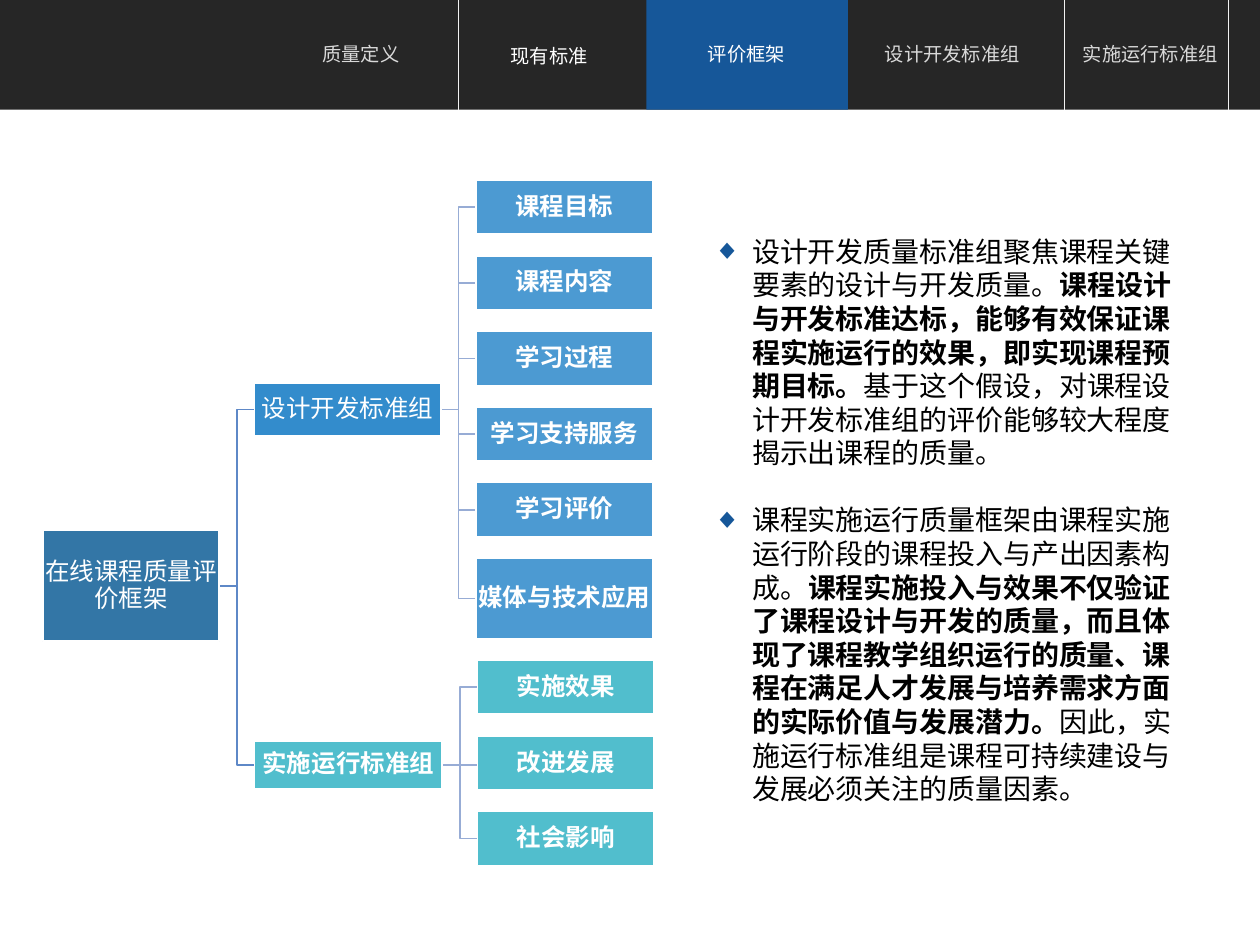
from lxml import etree
from pptx import Presentation
from pptx.dml.color import RGBColor
from pptx.enum.shapes import MSO_CONNECTOR, MSO_SHAPE
from pptx.enum.text import MSO_ANCHOR, MSO_AUTO_SIZE, PP_ALIGN
from pptx.oxml.ns import qn
from pptx.util import Inches, Pt

COLORS = {
    "bar": "262626", "active": "165799", "white": "FFFFFF", "muted": "D9D9D9",
    "divider": "F2F2F2", "black": "000000", "root": "005490", "design": "0070C0",
    "operate": "08A3B8", "trunk": "5E88C7", "branch": "97ACD5",
}
CJK = "Noto Sans CJK SC"


def rgb(name):
    return RGBColor.from_string(COLORS[name])


class Deck:
    def __init__(self, width, height):
        self.prs = Presentation()
        self.prs.slide_width, self.prs.slide_height = Inches(width), Inches(height)
        self.s = self.prs.slides.add_slide(self.prs.slide_layouts[1])

    def frame(self, sp, side=0.0, top=0.0, anchor=MSO_ANCHOR.MIDDLE):
        tf = sp.text_frame
        style = dict(word_wrap=True, auto_size=MSO_AUTO_SIZE.NONE, vertical_anchor=anchor,
                     margin_left=Inches(side), margin_right=Inches(side),
                     margin_top=Inches(top), margin_bottom=Inches(top))
        for key, value in style.items():
            setattr(tf, key, value)
        return tf

    def run(self, p, text, color, size, bold=False, font=CJK):
        r = p.add_run()
        r.text = text
        r.font.color.rgb = rgb(color)
        for key, value in dict(size=Pt(size), bold=bold, name=font).items():
            setattr(r.font, key, value)
        etree.SubElement(r.font._element, qn("a:ea"), typeface=CJK)

    def placeholder(self, sp, x, y, w, h):
        for key, value in dict(left=x, top=y, width=w, height=h).items():
            setattr(sp, key, Inches(value))
        self.s.shapes._spTree.append(sp._element)  # bring to front
        return sp

    def rect(self, x, y, w, h, fill, alpha=100, outline=None):
        sp = self.s.shapes.add_shape(MSO_SHAPE.RECTANGLE, *map(Inches, (x, y, w, h)))
        sp.shadow.inherit = False
        sp.fill.solid()
        sp.fill.fore_color.rgb = rgb(fill)
        if alpha < 100:
            color = sp._element.spPr.find(qn("a:solidFill"))[0]
            etree.SubElement(color, qn("a:alpha"), val=str(alpha * 1000))
        if outline:
            sp.line.color.rgb = rgb(outline)
            sp.line.width = Pt(1)
        else:
            sp.line.fill.background()
        return sp

    def tab(self, sp, text, color):
        p = self.frame(sp).paragraphs[0]
        p.alignment = PP_ALIGN.CENTER
        self.run(p, text, color, 11)

    def line(self, x1, y1, x2, y2, color, width):
        line = self.s.shapes.add_connector(
            MSO_CONNECTOR.STRAIGHT, *map(Inches, (x1, y1, x2, y2)))
        line.line.color.rgb = rgb(color)
        line.line.width = Pt(width)
        etree.SubElement(line._element.spPr, qn("a:effectLst"))

    def node(self, text, x, y, w, h, fill, alpha=70, bold=True):
        sp = self.rect(x, y, w, h, fill, alpha, "white")
        p = self.frame(sp, 0.01, 0.01).paragraphs[0]
        p.alignment = PP_ALIGN.CENTER
        p.line_spacing = Pt(14.9)
        self.run(p, text, "white", 14, bold, "Arial")

    def elbow(self, x1, y1, x2, y2, color):
        if abs(y1 - y2) < 0.02:
            self.line(x1, y1, x2, y1, color, 1)
            return
        mid = (x1 + x2) / 2
        path = self.s.shapes.build_freeform(Inches(x1), Inches(y1))
        path.add_line_segments([(Inches(x), Inches(y)) for x, y in
                                ((mid, y1), (mid, y2), (x2, y2))], close=False)
        sp = path.convert_to_shape()
        sp.shadow.inherit = False
        sp.fill.background()
        sp.line.color.rgb = rgb(color)
        sp.line.width = Pt(1)

    def bullets(self, sp, items):
        tf = self.frame(sp, 0.1, 0.05, MSO_ANCHOR.TOP)
        for i, item in enumerate(items):
            p = tf.paragraphs[0] if i == 0 else tf.add_paragraph()
            pPr = p._p.get_or_add_pPr()
            pPr.set("marL", str(Inches(0.31)))
            pPr.set("indent", str(-Inches(0.31)))
            bu = etree.SubElement(pPr, qn("a:buClr"))
            etree.SubElement(bu, qn("a:srgbClr"), val=COLORS["active"])
            etree.SubElement(pPr, qn("a:buChar"), char="◆")
            style = dict(line_spacing=Pt(19.2), space_before=Pt(19.2 if i else 0),
                         space_after=Pt(0), alignment=PP_ALIGN.LEFT)
            for key, value in style.items():
                setattr(p, key, value)
            for n, text in enumerate(item):
                self.run(p, text, "black", 16, bold=n == 1)


def main():
    deck = Deck(10, 7.5)
    title, body = deck.s.placeholders

    # Navigation bar; the active tab is the slide title
    deck.rect(0, 0, 10, 0.87, "bar")
    deck.rect(5.13, 0, 1.6, 0.87, "active")
    for text, x, y, w, color in [("质量定义", 2.18, 0.29, 1.37, "muted"),
                                 ("现有标准", 3.63, 0.3, 1.46, "white"),
                                 ("设计开发标准组", 6.78, 0.29, 1.56, "muted"),
                                 ("实施运行标准组", 8.49, 0.29, 1.28, "muted")]:
        box = deck.s.shapes.add_textbox(*map(Inches, (x, y, w, 0.28)))
        deck.tab(box, text, color)
    deck.tab(deck.placeholder(title, 5.19, 0.29, 1.47, 0.28), "评价框架", "white")
    for x in (3.64, 8.45, 9.75):
        deck.line(x, 0, x, 0.87, "divider", 0.75)

    # Framework tree: root, two groups, leaves stacked with an equal gap
    root_x, root_y, leaf_w, root_h = 0.34, 4.21, 1.4, 0.88
    group_x, leaf_h, gap = 2.02, 0.43, 0.17
    groups = [
        ("设计开发标准组", 3.04, 1.48, 0.42, "design", 80, False,
         ["课程目标", "课程内容", "学习过程", "学习支持服务", "学习评价", "媒体与技术应用"]),
        ("实施运行标准组", 5.88, 1.49, 0.38, "operate", 70, True,
         ["实施效果", "改进发展", "社会影响"]),
    ]
    leaf_y = 1.43
    for text, y, w, h, fill, alpha, bold, leaves in groups:
        center = y + h / 2
        deck.elbow(root_x + leaf_w, root_y + root_h / 2, group_x, center, "trunk")
        leaf_x = group_x + w + 0.28
        for leaf in leaves:
            height = 0.64 if leaf == "媒体与技术应用" else leaf_h
            deck.elbow(group_x + w, center, leaf_x, leaf_y + height / 2, "branch")
            deck.node(leaf, leaf_x, leaf_y, leaf_w, height, fill)
            leaf_y += height + gap
        deck.node(text, group_x, y, w, h, fill, alpha, bold)
    deck.node("在线课程质量评价框架", root_x, root_y, leaf_w, root_h, "root", 80, False)

    # Explanation: the middle run of each item is bold
    deck.bullets(deck.placeholder(body, 5.56, 1.81, 3.89, 4.98), [
        ("设计开发质量标准组聚焦课程关键要素的设计与开发质量。",
         "课程设计与开发标准达标，能够有效保证课程实施运行的效果，即实现课程预期目标。",
         "基于这个假设，对课程设计开发标准组的评价能够较大程度揭示出课程的质量。"),
        ("课程实施运行质量框架由课程实施运行阶段的课程投入与产出因素构成。",
         "课程实施投入与效果不仅验证了课程设计与开发的质量，而且体现了课程教学组织运行的质量、"
         "课程在满足人才发展与培养需求方面的实际价值与发展潜力。",
         "因此，实施运行标准组是课程可持续建设与发展必须关注的质量因素。"),
    ])

    deck.prs.save("out.pptx")


if __name__ == "__main__":
    main()
